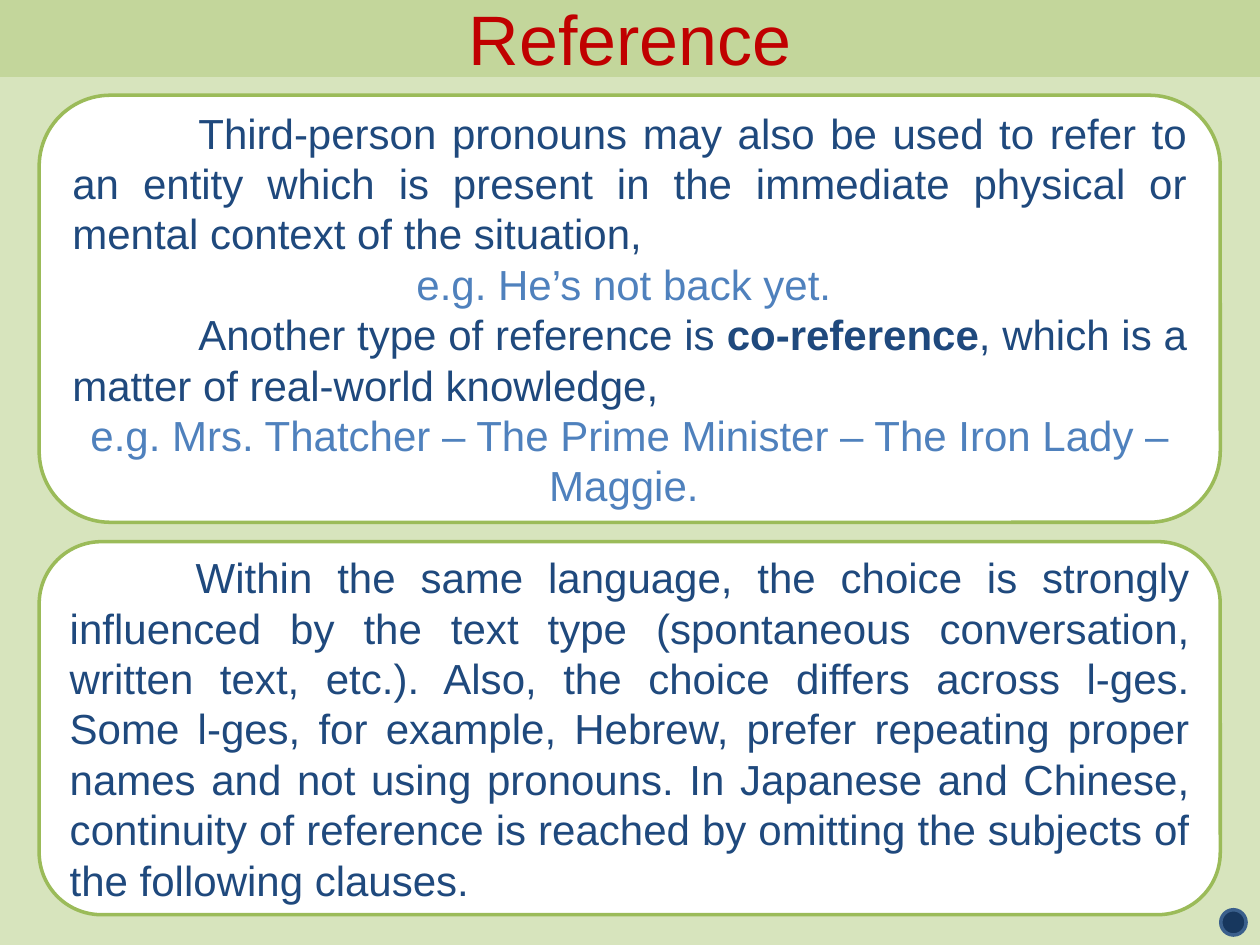
from dataclasses import dataclass

from pptx import Presentation
from pptx.dml.color import RGBColor as RGB
from pptx.enum.shapes import MSO_SHAPE as Shape
from pptx.enum.text import MSO_ANCHOR as Anchor, MSO_AUTO_SIZE as AutoSize, PP_ALIGN as Align
from pptx.util import Cm, Pt


@dataclass(frozen=True)
class Theme:
    font: str = "Arial"
    title_size: int = 40
    body_size: int = 24
    line_width: int = 2
    background: str = "D7E4BD"
    banner: str = "C3D69B"
    title: str = "C00000"
    panel: str = "FFFFFF"
    panel_line: str = "9BBB59"
    body: str = "1F497D"
    example: str = "4F81BD"
    dot: str = "17375E"
    dot_line: str = "3A5F8C"


class SlideBuilder:
    """Holds the theme and the current slide."""

    def __init__(self, prs, theme):
        self.theme = theme
        self.slide = prs.slides.add_slide(prs.slide_layouts[5])
        self.slide.background.fill.solid()
        self.slide.background.fill.fore_color.rgb = RGB.from_string(theme.background)

    def paint(self, sp, fill, line):
        sp.fill.solid()
        sp.fill.fore_color.rgb = RGB.from_string(fill)
        sp.line.color.rgb = RGB.from_string(line)
        sp.line.width = Pt(self.theme.line_width)

    def style(self, p, size, color, align):
        p.alignment = align
        p.font.name = self.theme.font
        p.font.size = Pt(size)
        p.font.color.rgb = RGB.from_string(color)

    def frame(self, sp):
        tf = sp.text_frame
        tf.word_wrap = True
        tf.auto_size = AutoSize.NONE
        tf.vertical_anchor = Anchor.MIDDLE
        return tf

    def title(self, text, width, height):
        t = self.theme
        sp = self.slide.shapes.title
        sp.left, sp.top, sp.width, sp.height = 0, 0, width, height
        self.paint(sp, t.banner, t.banner)
        p = self.frame(sp).paragraphs[0]
        p.text = text
        self.style(p, t.title_size, t.title, Align.CENTER)

    def shape(self, kind, box, fill, line):
        sp = self.slide.shapes.add_shape(kind, *map(Cm, box))
        sp.shadow.inherit = False
        self.paint(sp, fill, line)
        return sp

    def panel(self, box, paragraphs):
        """Each paragraph is (is_example, runs); every second run is bold."""
        t = self.theme
        tf = self.frame(self.shape(Shape.ROUNDED_RECTANGLE, box, t.panel, t.panel_line))
        for i, (is_example, runs) in enumerate(paragraphs):
            p = tf.add_paragraph() if i else tf.paragraphs[0]
            if is_example:
                self.style(p, t.body_size, t.example, Align.CENTER)
            else:
                self.style(p, t.body_size, t.body, Align.JUSTIFY)
                # First-line indent
                pPr = p._p.get_or_add_pPr()
                pPr.set("marL", "0")
                pPr.set("indent", str(Cm(2.54)))
            for j, text in enumerate(runs):
                r = p.add_run()
                r.text = text
                if j % 2:
                    r.font.bold = True

    def dot(self, box):
        self.shape(Shape.OVAL, box, self.theme.dot, self.theme.dot_line)


REFERENCE = [
    (False, ["Third-person pronouns may also be used to refer to an entity which is "
             "present in the immediate physical or mental context of the situation,"]),
    (True, ["e.g. He’s not back yet. "]),
    (False, ["Another type of reference is ", "co-reference",
             ", which is a matter of real-world knowledge,"]),
    (True, ["e.g. Mrs. Thatcher – The Prime Minister – The Iron Lady – Maggie. "]),
]
CHOICE = [
    (False, ["Within the same language, the choice is strongly influenced by the text type "
             "(spontaneous conversation, written text, etc.). Also, the choice differs across "
             "l-ges. Some l-ges, for example, Hebrew, prefer repeating proper names and not "
             "using pronouns. In Japanese and Chinese, continuity of reference is reached by "
             "omitting the subjects of the following clauses. "]),
]


def main():
    prs = Presentation()
    prs.slide_width, prs.slide_height = Cm(25.4), Cm(19.05)
    s = SlideBuilder(prs, Theme())

    # Banner title
    s.title("Reference", prs.slide_width, Cm(1.52))

    # Text panels share their left edge and width
    left, width = 0.79, 23.81
    s.panel((left, 1.92, width, 8.61), REFERENCE)
    s.dot((24.61, 18.34, 0.51, 0.51))
    s.panel((left, 10.92, width, 7.52), CHOICE)

    prs.save("out.pptx")


if __name__ == "__main__":
    main()
